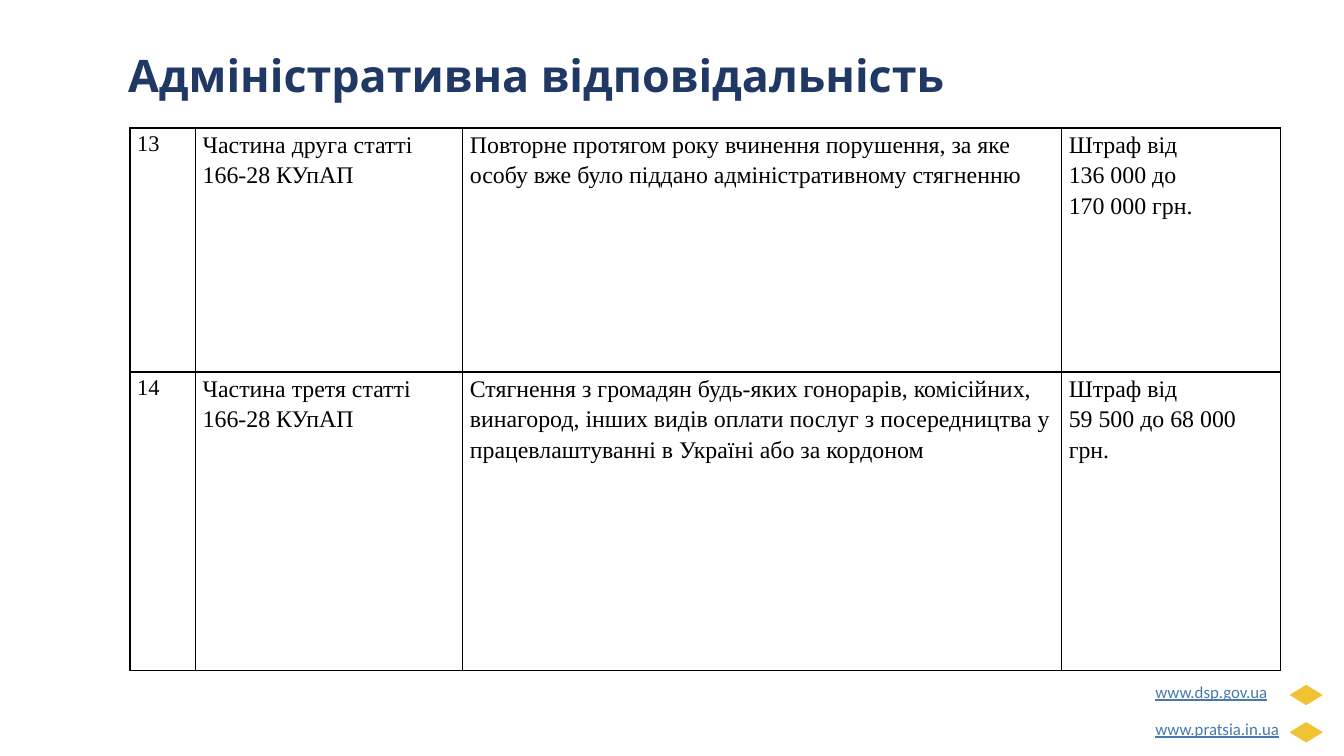
from dataclasses import dataclass

from lxml import etree
from pptx import Presentation
from pptx import util as u
from pptx.dml.color import RGBColor
from pptx.enum import shapes, text
from pptx.oxml.ns import qn

NAVY, GOLD, LINK, BLACK = "203864", "F1C232", "4778AE", "000000"
COLUMN_SHARES = (4.88, 19.88, 44.56, 16.28)
ROW_SHARES = (32.27, 39.47)
LINK_PITCH = 4.93

presentation = Presentation()
presentation.slide_width = u.Inches(13.33)
presentation.slide_height = u.Inches(7.5)


@dataclass
class Penalty:
    number: str
    article: str
    offence: str
    fine: str


@dataclass
class SiteLink:
    address: str
    width: float


PENALTIES = (
    Penalty(
        "13",
        "Частина друга статті\n166-28 КУпАП",
        "Повторне протягом року вчинення порушення, за яке особу вже було "
        "піддано адміністративному стягненню",
        "Штраф від\n136 000 до\n170 000 грн.",
    ),
    Penalty(
        "14",
        "Частина третя статті\n166-28 КУпАП",
        "Стягнення з громадян будь-яких гонорарів, комісійних, винагород, "
        "інших видів оплати послуг з посередництва у працевлаштуванні "
        "в Україні або за кордоном",
        "Штраф від\n59 500 до 68 000 грн.",
    ),
)
LINKS = (SiteLink("www.dsp.gov.ua", 11.63), SiteLink("www.pratsia.in.ua", 13.05))


def across(percent: float) -> int:
    """Share of the slide's width."""
    return round(presentation.slide_width * percent / 100)


def down(percent: float) -> int:
    """Share of the slide's height."""
    return round(presentation.slide_height * percent / 100)


def colour(value: str) -> RGBColor:
    return RGBColor.from_string(value)


def format_text(frame, font_name: str, size: float, value: str,
                bold: bool = False, underline: bool = False) -> None:
    for paragraph in frame.paragraphs:
        paragraph.alignment = text.PP_ALIGN.LEFT
        for run in paragraph.runs:
            run.font.name = font_name
            run.font.size = u.Pt(size)
            run.font.bold = bold
            run.font.underline = underline
            run.font.color.rgb = colour(value)


def add_borders(cell, value: str, points: float) -> None:
    properties = cell._tc.get_or_add_tcPr()
    for position, side in enumerate(("a:lnL", "a:lnR", "a:lnT", "a:lnB")):
        line = etree.Element(qn(side), w=str(u.Pt(points)))
        fill = etree.SubElement(line, qn("a:solidFill"))
        etree.SubElement(fill, qn("a:srgbClr"), val=value)
        properties.insert(position, line)


def fill_cell(cell, words: str, size: float) -> None:
    cell.text_frame.text = words
    format_text(cell.text_frame, "Times New Roman", size, BLACK)
    for paragraph in cell.text_frame.paragraphs:
        paragraph.line_spacing = 1.15
    cell.margin_left = cell.margin_right = u.Inches(0.07)
    cell.margin_top = cell.margin_bottom = 0
    cell.fill.background()
    add_borders(cell, BLACK, 1)


def add_site_link(slide, link: SiteLink, index: int) -> None:
    offset = index * LINK_PITCH
    diamond = slide.shapes.add_shape(
        shapes.MSO_SHAPE.FLOWCHART_DECISION,
        across(96.02), down(90.67 + offset), across(2.33), down(2.53))
    diamond.shadow.inherit = False
    diamond.fill.solid()
    diamond.fill.fore_color.rgb = colour(GOLD)
    diamond.line.color.rgb = colour(GOLD)
    diamond.line.width = u.Pt(0.75)

    label = slide.shapes.add_textbox(
        across(85), down(88.8 + offset), across(link.width), down(6.27))
    frame = label.text_frame
    frame.word_wrap = True
    frame.margin_left = frame.margin_right = u.Inches(0.13)
    frame.margin_top = frame.margin_bottom = u.Inches(0.13)
    frame.text = link.address
    format_text(frame, "Calibri", 12, LINK, underline=True)


def add_title(slide, words: str) -> None:
    title = slide.shapes.title
    title.left, title.top = across(8.78), down(5.6)
    title.width, title.height = across(74.72), down(8.53)
    frame = title.text_frame
    frame.text = words
    frame.vertical_anchor = text.MSO_ANCHOR.TOP
    frame.auto_size = text.MSO_AUTO_SIZE.SHAPE_TO_FIT_TEXT
    format_text(frame, "Open Sans", 32, NAVY, bold=True)


def add_penalty_table(slide) -> None:
    table = slide.shapes.add_table(
        len(PENALTIES), len(COLUMN_SHARES), across(9.68), down(16.93),
        across(sum(COLUMN_SHARES)), down(sum(ROW_SHARES))).table
    table.first_row = table.horz_banding = False
    for column, share in zip(table.columns, COLUMN_SHARES):
        column.width = across(share)
    for row, share, penalty in zip(table.rows, ROW_SHARES, PENALTIES):
        row.height = down(share)
        entries = (penalty.number, penalty.article, penalty.offence, penalty.fine)
        for index, (cell, words) in enumerate(zip(row.cells, entries)):
            fill_cell(cell, words, 16 if index == 0 else 17)


def main() -> None:
    slide = presentation.slides.add_slide(presentation.slide_layouts[5])
    # Footer links with diamonds
    for index, link in enumerate(LINKS):
        add_site_link(slide, link, index)
    # Heading and table of penalties
    add_title(slide, "Адміністративна відповідальність")
    add_penalty_table(slide)
    presentation.save("out.pptx")


if __name__ == "__main__":
    main()
